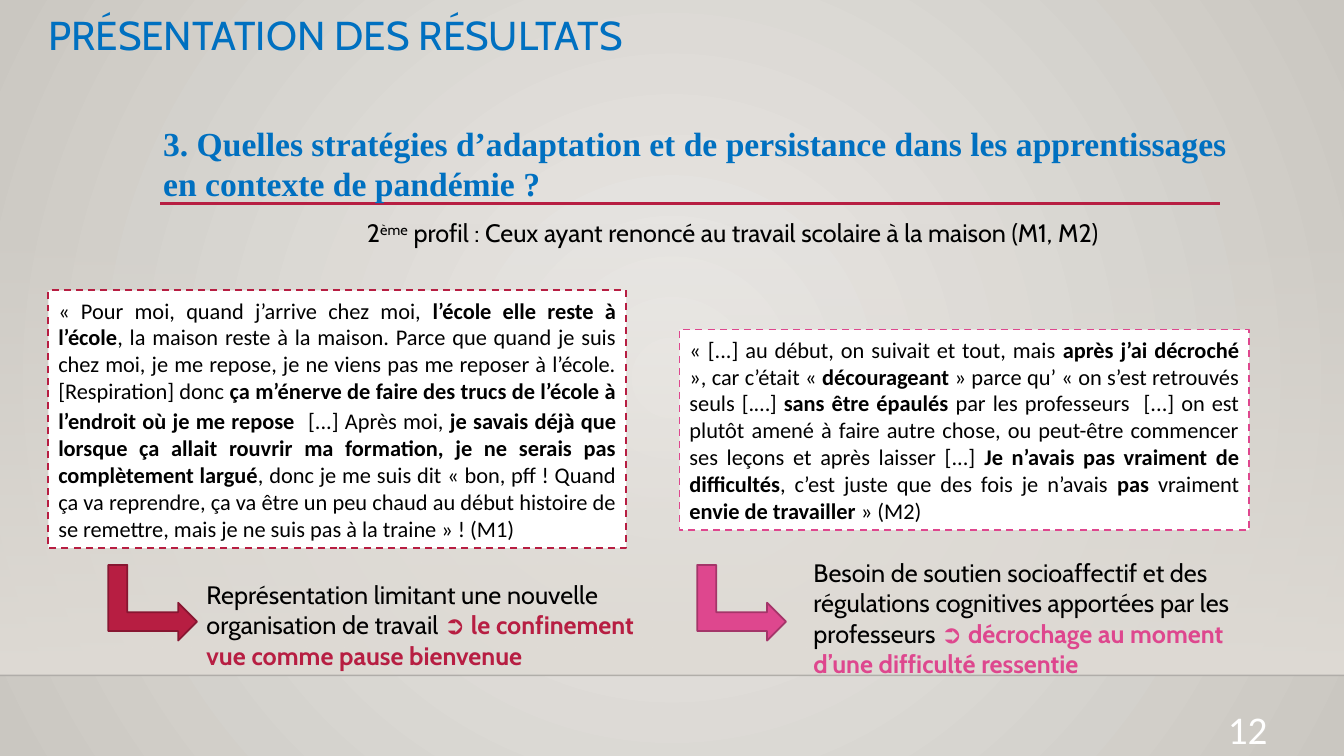
from lxml import etree
from pptx import Presentation
from pptx import util as u
from pptx.dml.color import RGBColor
from pptx.enum import dml, shapes, text
from pptx.oxml.ns import qn

WIDTH, HEIGHT = u.Inches(13.33), u.Inches(7.5)
COLORS = {
    "glow": "ECEAE7", "edge": "CAC7C1", "band": "DFDBD5", "shade": "000001",
    "blue": "0070C0", "black": "000000", "white": "FFFFFF",
    "red": "B71E42", "dark_red": "871631",
    "pink": "DE478E", "dark_pink": "A43569",
}
BOLD = {"bold": True}

QUOTE_M1 = [
    ("« Pour moi, quand j’arrive chez moi, ", {}),
    ("l’école elle reste à l’école", BOLD),
    (", la maison reste à la maison. Parce que quand je suis chez moi, je me repose, "
     "je ne viens pas me reposer à l’école. [Respiration] donc ", {}),
    ("ça m’énerve de faire des trucs de l’école à l’endroit où je me repose ", BOLD),
    (" ", {"bold": True, "size": 18}),
    ("[...] Après moi, ", {}),
    ("je savais déjà que lorsque ça allait rouvrir ma formation, "
     "je ne serais pas complètement largué", BOLD),
    (", donc je me suis dit « bon, pff ! Quand ça va reprendre, ça va être un peu chaud "
     "au début histoire de se remettre, mais je ne suis pas à la traine » ! (M1)", {}),
]
QUOTE_M2 = [
    ("« [...] au début, on suivait et tout, mais ", {}),
    ("après j’ai décroché ", BOLD),
    ("», car c’était « ", {}),
    ("décourageant", BOLD),
    (" » parce qu’ « on s’est retrouvés seuls [.…] ", {}),
    ("sans être épaulés", BOLD),
    (" par les professeurs  [...] on est plutôt amené à faire autre chose, "
     "ou peut-être commencer ses leçons et après laisser [...] ", {}),
    ("Je n’avais pas vraiment de difficultés", BOLD),
    (", c’est juste que des fois je n’avais ", {}),
    ("pas", BOLD),
    (" vraiment ", {}),
    ("envie de travailler ", BOLD),
    ("» (M2) ", {}),
]


def rgb(name):
    return RGBColor.from_string(COLORS[name])


def across(share):
    return round(WIDTH * share / 100)


def down(share):
    return round(HEIGHT * share / 100)


def place(left, top, width, height):
    return across(left), down(top), across(width), down(height)


def set_alpha(color, percent):
    etree.SubElement(color, qn("a:alpha"), val=str(percent * 1000))


def fill_gradient(fill, first, last):
    fill.gradient()
    for stop, name, position in zip(fill.gradient_stops, (first, last), (0, 1)):
        stop.color.rgb = rgb(name)
        stop.position = position


def paint_background(page):
    fill_gradient(page.background.fill, "glow", "edge")
    linear = next(page.element.iter(qn("a:lin")))
    radial = etree.Element(qn("a:path"), {"path": "circle"})
    center = dict.fromkeys("ltrb", "50000")
    etree.SubElement(radial, qn("a:fillToRect"), center)
    linear.getparent().replace(linear, radial)


def add_band(page, area):
    band = page.shapes.add_shape(shapes.MSO_SHAPE.RECTANGLE, *area)
    band.shadow.inherit = False
    fill_gradient(band.fill, "band", "band")
    band.fill.gradient_angle = 270
    set_alpha(next(band.element.iter(qn("a:srgbClr"))), 0)
    band.line.fill.background()


def add_rule(page, start, end, row, color, weight, alpha=None):
    rule = page.shapes.add_connector(
        shapes.MSO_CONNECTOR.STRAIGHT, across(start), down(row), across(end), down(row))
    rule.line.color.rgb = rgb(color)
    rule.line.width = u.Pt(weight)
    if alpha is not None:
        set_alpha(next(rule.element.iter(qn("a:srgbClr"))), alpha)
    etree.SubElement(rule.element.spPr, qn("a:effectLst"))


def write(box, spans, font, size, color="black", align=text.PP_ALIGN.LEFT):
    box.text_frame.word_wrap = True
    para = box.text_frame.paragraphs[0]
    para.alignment = align
    for words, style in spans:
        span = para.add_run()
        span.text = words
        span.font.name = font
        span.font.size = u.Pt(style.get("size", size))
        span.font.bold = style.get("bold", False)
        span.font.color.rgb = rgb(style.get("color", color))
        if "raised" in style:
            span._r.get_or_add_rPr().set("baseline", str(style["raised"] * 1000))


def add_title(page, words, area):
    title = page.shapes.title
    title.left, title.top, title.width, title.height = area
    title.text_frame.vertical_anchor = text.MSO_ANCHOR.TOP
    write(title, [(words, {})], "Cabin", 28.8, "blue")
    title.text_frame.paragraphs[0].line_spacing = 0.9


def add_text(page, area, spans, font, size, **look):
    write(page.shapes.add_textbox(*area), spans, font, size, **look)


def add_quote(page, area, spans, color):
    quote = page.shapes.add_shape(shapes.MSO_SHAPE.RECTANGLE, *area)
    quote.shadow.inherit = False
    quote.fill.solid()
    quote.fill.fore_color.rgb = rgb("white")
    quote.line.color.rgb = rgb(color)
    quote.line.width = u.Pt(1.25)
    quote.line.dash_style = dml.MSO_LINE.DASH
    write(quote, spans, "Calibri", 16, align=text.PP_ALIGN.JUSTIFY)


def add_arrow(page, left, color):
    arrow = page.shapes.add_shape(
        shapes.MSO_SHAPE.BENT_UP_ARROW, *place(left, 73.87, 5.63, 11.73))
    arrow.rotation = 90
    arrow.shadow.inherit = False
    arrow.fill.solid()
    arrow.fill.fore_color.rgb = rgb(color)
    arrow.line.color.rgb = rgb("dark_" + color)
    arrow.line.width = u.Pt(1.25)


def add_lesson(page, area, finding, outcome, color):
    spans = [(finding, {}), (outcome, {"bold": True, "color": color})]
    add_text(page, area, spans, "Cabin", 18)


def main():
    deck = Presentation()
    deck.slide_width, deck.slide_height = WIDTH, HEIGHT
    page = deck.slides.add_slide(deck.slide_layouts.get_by_name("Title Only"))
    paint_background(page)
    add_band(page, place(0, 29.47, 100, 59.87))
    add_rule(page, 0, 100, 89.33, "shade", 1, alpha=20)
    add_rule(page, 11.93, 90.77, 26.93, "red", 2.5)

    add_title(page, "PRÉSENTATION DES RÉSULTATS", place(2.85, 1.47, 78.77, 8.27))
    add_text(page, place(11.4, 15.6, 82.37, 12.13),
             [("3. Quelles stratégies d’adaptation et de persistance dans les "
               "apprentissages en contexte de pandémie ?", BOLD)],
             "Times New Roman", 24, color="blue")
    add_text(page, place(26.56, 28.13, 57.31, 5.33),
             [("2", {}), ("ème", {"raised": 30}),
              (" profil : Ceux ayant renoncé au travail scolaire à la maison (M1, M2)", {})],
             "Cabin", 18)
    add_text(page, place(71.72, 92.67, 23.33, 5.33), [("12", {})],
             "Calibri", 28, color="white", align=text.PP_ALIGN.RIGHT)

    add_quote(page, place(3.6, 38.4, 42.99, 34.13), QUOTE_M1, "red")
    add_quote(page, place(50.56, 43.6, 42.39, 26.53), QUOTE_M2, "pink")
    add_arrow(page, 8.55, "red")
    add_arrow(page, 52.36, "pink")
    add_lesson(page, place(14.63, 76, 34.88, 13.47),
               "Représentation limitant une nouvelle organisation de travail ",
               "➲ le confinement vue comme pause bienvenue", "red")
    add_lesson(page, place(59.79, 73.07, 34.58, 17.47),
               "Besoin de soutien socioaffectif et des régulations cognitives "
               "apportées par les professeurs ",
               "➲ décrochage au moment d’une difficulté ressentie", "pink")
    deck.save("out.pptx")


if __name__ == "__main__":
    main()
